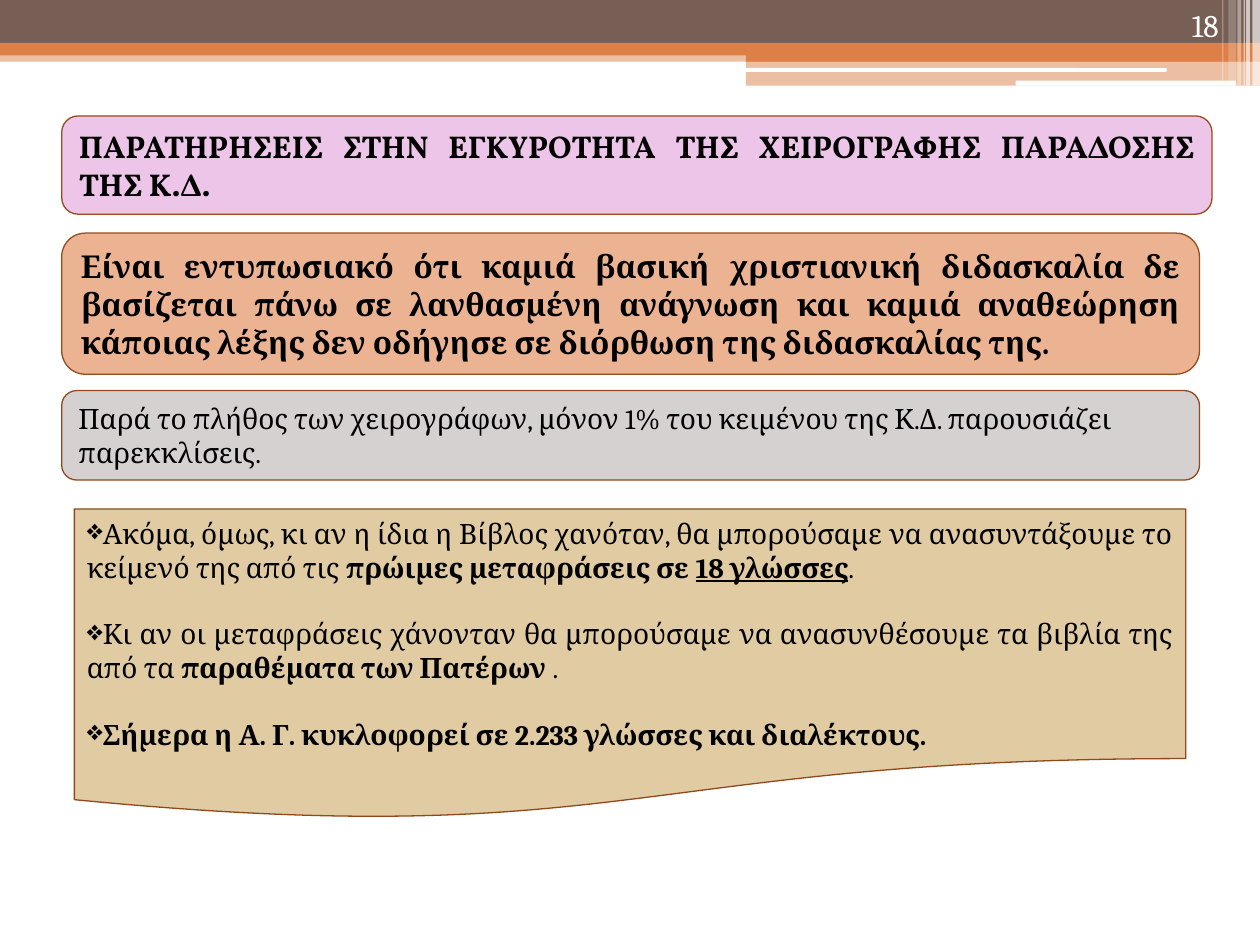
from dataclasses import dataclass

from lxml.etree import SubElement
from pptx import Presentation
from pptx.dml.color import RGBColor
from pptx.enum.shapes import MSO_SHAPE
from pptx.enum.text import MSO_ANCHOR, PP_ALIGN
from pptx.oxml.ns import qn
from pptx.util import Inches, Pt


@dataclass(frozen=True)
class Theme:
    brown: str = "775F55"
    orange: str = "DD8047"
    white: str = "FFFFFF"
    black: str = "000000"
    pink: str = "EDC5E8"
    peach: str = "EBB391"
    grey: str = "D5D1D1"
    sand: str = "E0CBA3"
    edge: str = "984B1C"
    dark_edge: str = "91481B"
    body: str = "Cambria"
    heading: str = "Vollkorn"
    large: int = 18
    normal: int = 16
    gap: int = 19


class SlideBuilder:
    """Draws themed elements on one slide over a grid of 100 columns by 75 rows."""

    def __init__(self, prs, theme):
        self.theme = theme
        self.s = prs.slides.add_slide(prs.slide_layouts[6])
        self.col = prs.slide_width / 100
        self.row = prs.slide_height / 75

    def place(self, x, y, w, h):
        return [int(n) for n in (x * self.col, y * self.row, w * self.col, h * self.row)]

    def shape(self, kind, box, color, edge=None):
        sp = self.s.shapes.add_shape(kind, *self.place(*box))
        sp.shadow.inherit = False
        sp.fill.solid()
        sp.fill.fore_color.rgb = RGBColor.from_string(color)
        if edge:
            sp.line.color.rgb = RGBColor.from_string(edge)
            sp.line.width = Pt(0.75)
        else:
            sp.line.fill.background()
        return sp

    def bar(self, box, color, opacity=100, rounded=False):
        kind = MSO_SHAPE.ROUNDED_RECTANGLE if rounded else MSO_SHAPE.RECTANGLE
        sp = self.shape(kind, box, color)
        if opacity < 100:
            clr = sp.fill._xPr.find(".//" + qn("a:srgbClr"))
            SubElement(clr, qn("a:alpha"), val=str(opacity * 1000))

    def style(self, p, size, align, color, font=None, bold=None):
        p.alignment = align
        p.font.name = font or self.theme.body
        p.font.size = Pt(size)
        p.font.bold = bold
        p.font.color.rgb = RGBColor.from_string(color)

    def panel(self, box, color, edge, text, size, align, font=None, bold=None):
        sp = self.shape(MSO_SHAPE.ROUNDED_RECTANGLE, box, color, edge)
        p = sp.text_frame.paragraphs[0]
        p.text = text
        self.style(p, size, align, self.theme.black, font, bold)

    def bullet_panel(self, box, color, edge, items):
        tf = self.shape(MSO_SHAPE.FLOWCHART_DOCUMENT, box, color, edge).text_frame
        for i, runs in enumerate(items):
            p = tf.add_paragraph() if i else tf.paragraphs[0]
            SubElement(p._p.get_or_add_pPr(), qn("a:buChar"), char="❖")
            self.style(p, self.theme.normal, PP_ALIGN.JUSTIFY, self.theme.black)
            if i:
                p.space_before = Pt(self.theme.gap)
            for text, marks in runs:
                r = p.add_run()
                r.text = text
                r.font.bold = "b" in marks or None
                r.font.underline = "u" in marks or None

    def page_number(self, box, text):
        tf = self.s.shapes.add_textbox(*self.place(*box)).text_frame
        tf.word_wrap = True
        tf.vertical_anchor = MSO_ANCHOR.BOTTOM
        p = tf.paragraphs[0]
        p.text = text
        self.style(p, self.theme.large, PP_ALIGN.RIGHT, self.theme.white)


def main():
    prs = Presentation()
    prs.slide_width, prs.slide_height = Inches(10), Inches(7.5)
    t = Theme()
    b = SlideBuilder(prs, t)

    b.bar((0, 4, 100, 0.9), t.orange, 50)
    b.bar((0, 0, 100, 3.4), t.brown)
    b.bar((0, 3.4, 100, 1), t.orange)
    b.bar((59.2, 3.9, 40.8, 1), t.orange)
    b.bar((59.2, 4.8, 40.8, 2), t.orange, 50)
    b.bar((59.1, 5.4, 33.5, 0.3), t.white, rounded=True)
    b.bar((80.6, 6.4, 17.5, 0.4), t.white, rounded=True)
    for x, width, height, opacity in [
        (99.4, 0.6, 6.8, 65),
        (98.9, 0.3, 6.8, 65),
        (98.7, 0.1, 6.8, 60),
        (98.2, 0.3, 6.8, 40),
        (97.5, 0.6, 6.4, 20),
        (97, 0.1, 6.4, 30),
    ]:
        b.bar((x, 0, width, height), t.white, opacity)
    b.page_number((89.4, 0, 8.3, 4), "18")

    b.panel((4.9, 31, 90.3, 7.1), t.grey, t.dark_edge,
            "Παρά το πλήθος των χειρογράφων, μόνον 1% του κειμένου της Κ.Δ. "
            "παρουσιάζει παρεκκλίσεις.", t.normal, PP_ALIGN.LEFT)
    b.panel((4.9, 18.5, 90.3, 11.2), t.peach, t.edge,
            "Είναι εντυπωσιακό ότι καμιά βασική χριστιανική διδασκαλία δε βασίζεται "
            "πάνω σε λανθασμένη ανάγνωση και καμιά αναθεώρηση κάποιας λέξης δεν "
            "οδήγησε σε διόρθωση της διδασκαλίας της.",
            t.large, PP_ALIGN.JUSTIFY, bold=True)
    b.panel((4.9, 9.2, 91.3, 7.8), t.pink, t.edge,
            "ΠΑΡΑΤΗΡΗΣΕΙΣ ΣΤΗΝ ΕΓΚΥΡΟΤΗΤΑ ΤΗΣ ΧΕΙΡΟΓΡΑΦΗΣ ΠΑΡΑΔΟΣΗΣ ΤΗΣ Κ.Δ.",
            t.large, PP_ALIGN.JUSTIFY, t.heading, True)
    b.bullet_panel((5.9, 40.4, 88.2, 24.7), t.sand, t.dark_edge, [
        [("Ακόμα, όμως, κι αν η ίδια η Βίβλος χανόταν, θα μπορούσαμε να "
          "ανασυντάξουμε το κείμενό της από τις ", ""),
         ("πρώιμες μεταφράσεις σε ", "b"), ("18 γλώσσες", "bu"), (".", "")],
        [("Κι αν οι μεταφράσεις χάνονταν θα μπορούσαμε να ανασυνθέσουμε τα "
          "βιβλία της από τα ", ""),
         ("παραθέματα των Πατέρων", "b"), (" .", "")],
        [("Σήμερα η Α. Γ. κυκλοφορεί σε 2.233 γλώσσες και διαλέκτους.", "b")],
    ])
    prs.save("out.pptx")


if __name__ == "__main__":
    main()
